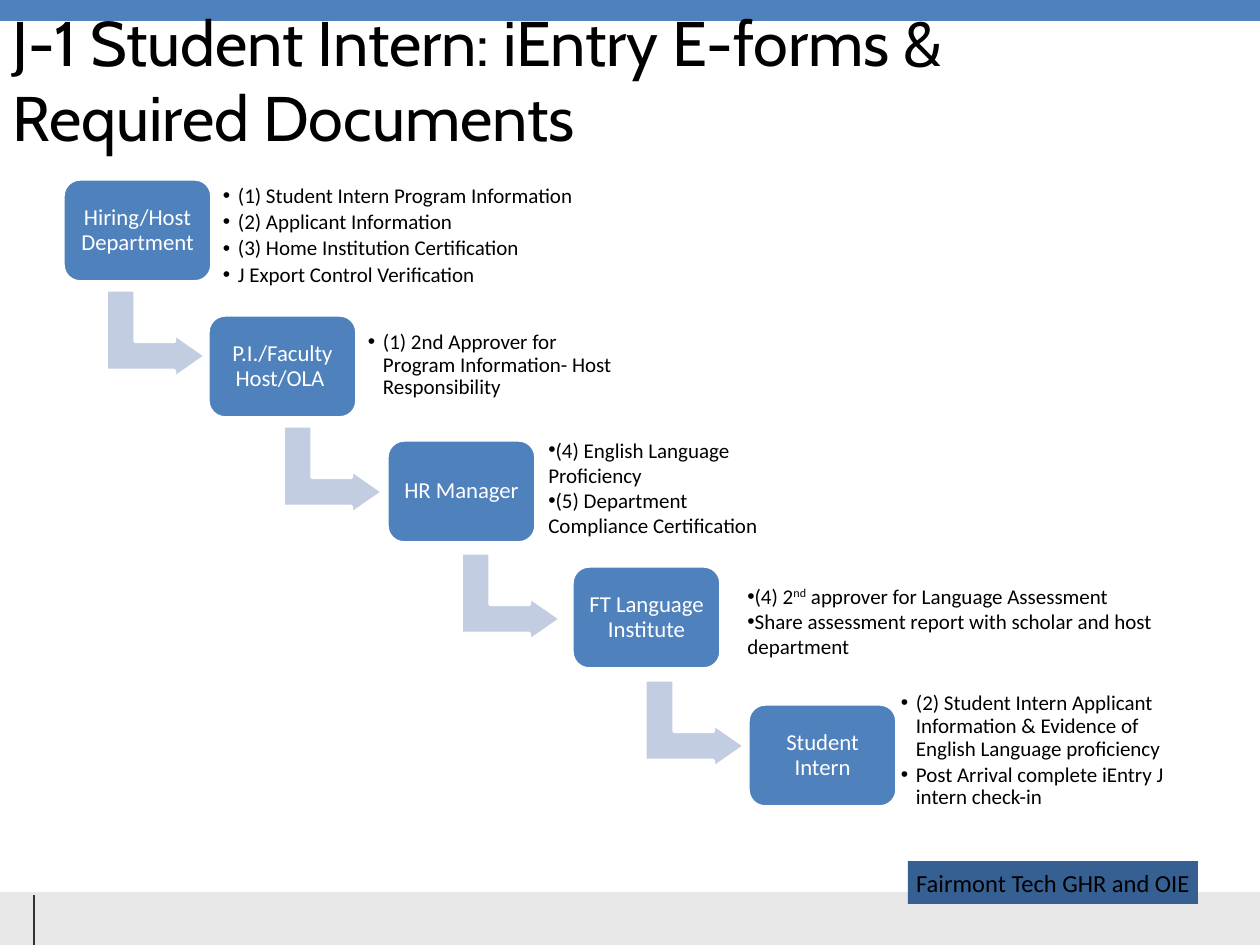
"""Build the J-1 student intern e-forms slide as a descending staircase of steps."""
from lxml.etree import SubElement
from pptx import Presentation
from pptx.dml.color import RGBColor
from pptx.enum.shapes import MSO_CONNECTOR as Connector, MSO_SHAPE as Shape
from pptx.enum.text import MSO_ANCHOR as Anchor, PP_ALIGN as Align
from pptx.oxml.ns import qn
from pptx.util import Pt

PX = 914400 / 126
COLORS = {
    "bar": "4F81BD", "arrow": "C2CDE1", "footer": "E8E8E8", "badge": "376092",
    "rule": "333333", "white": "FFFFFF", "black": "000000",
}
TITLE = "J-1 Student Intern: iEntry E-forms & Required Documents"
BADGE = "Fairmont Tech GHR and OIE"
STEP_SIZE = (149, 103)
ARROW_SIZE = (88, 100)
ARROW_ADJUSTMENTS = (0.33, 0.25, 0.36)
STEPS = [
    {"name": "Hiring/Host Department", "at": (63, 179), "arrow": (112, 284),
     "notes": (217, 188, 420, 96), "hanging": True,
     "bullets": ["(1) Student Intern Program Information", "(2) Applicant Information",
                 "(3) Home Institution Certification", "J Export Control Verification"]},
    {"name": "P.I./Faculty Host/OLA ", "at": (208, 315), "arrow": (289, 420),
     "notes": (362, 324, 270, 83), "hanging": True,
     "bullets": ["(1) 2nd Approver for Program Information- Host Responsibility"]},
    {"name": "HR Manager", "at": (387, 440), "arrow": (467, 547),
     "notes": (536, 431, 238, 115), "hanging": False,
     "bullets": ["(4) English Language Proficiency",
                 "(5) Department Compliance Certification"]},
    {"name": "FT Language Institute", "at": (572, 566), "arrow": (651, 674),
     "notes": (735, 577, 441, 89), "hanging": False,
     "bullets": ["(4) 2^nd^ approver for Language Assessment",
                 "Share assessment report with scholar and host department"]},
    {"name": "Student Intern", "at": (748, 704), "arrow": None,
     "notes": (895, 685, 314, 132), "hanging": True,
     "bullets": ["(2) Student Intern Applicant Information & Evidence of "
                 "English Language proficiency",
                 "Post Arrival complete iEntry J intern check-in"]},
]


def emu(*lengths):
    return [round(length * PX) for length in lengths]


def color(name):
    return RGBColor.from_string(COLORS[name])


def add_block(page, kind, place, fill, outlined=False):
    block = page.shapes.add_shape(kind, *emu(*place))
    block.shadow.inherit = False
    block.fill.solid()
    block.fill.fore_color.rgb = color(fill)
    if outlined:
        block.line.color.rgb = color("white")
        block.line.width = Pt(2)
    else:
        block.line.fill.background()
    return block


def set_margins(frame, margin):
    side = emu(margin)[0]
    frame.margin_left = frame.margin_right = side
    frame.margin_top = frame.margin_bottom = side


def style_text(para, size, font="Calibri", ink="black"):
    for span in para.runs:
        span.font.size = Pt(size)
        span.font.name = font
        span.font.color.rgb = color(ink)


def write(shape, text, size, align, **style):
    frame = shape.text_frame
    frame.vertical_anchor = Anchor.MIDDLE
    para = frame.paragraphs[0]
    para.text = text
    para.alignment = align
    style_text(para, size, **style)
    return para


def add_step(page, name, at):
    box = add_block(page, Shape.ROUNDED_RECTANGLE, at + STEP_SIZE, "bar", outlined=True)
    set_margins(box.text_frame, 11)
    box.text_frame.word_wrap = True
    write(box, name, 13, Align.CENTER, ink="white").line_spacing = 0.9


def add_arrow(page, at):
    arrow = add_block(page, Shape.BENT_UP_ARROW, at + ARROW_SIZE, "arrow", outlined=True)
    arrow.rotation = 90
    for index, value in enumerate(ARROW_ADJUSTMENTS):
        arrow.adjustments[index] = value


def add_bullets(page, place, bullets, hanging):
    frame = page.shapes.add_textbox(*emu(*place)).text_frame
    frame.word_wrap = True
    if hanging:
        frame.vertical_anchor = Anchor.MIDDLE
        set_margins(frame, 6)
    left, indent = emu(15, -15) if hanging else emu(0, -13)
    for index, bullet in enumerate(bullets):
        para = frame.add_paragraph() if index else frame.paragraphs[0]
        for part_index, part in enumerate(bullet.split("^")):
            span = para.add_run()
            span.text = part
            if part_index % 2:
                span.font._element.set("baseline", "30000")
        style_text(para, 12)
        if hanging:
            para.line_spacing = 0.9
            para.space_after = Pt(2)
        settings = para._p.get_or_add_pPr()
        settings.set("marL", str(left))
        settings.set("indent", str(indent))
        SubElement(settings, qn("a:buFont"), typeface="Arial")
        SubElement(settings, qn("a:buChar"), char="•")


def add_frame(page):
    add_block(page, Shape.RECTANGLE, (0, 892, 1260, 53), "footer")
    rule = page.shapes.add_connector(Connector.STRAIGHT, *emu(34, 895, 34, 945))
    rule.line.color.rgb = color("rule")
    rule.line.width = Pt(0.75)
    SubElement(rule._element.spPr, qn("a:effectLst"))
    badge = add_block(page, Shape.RECTANGLE, (908, 861, 290, 43), "badge")
    badge.text_frame.word_wrap = False
    write(badge, BADGE, 14, Align.CENTER)
    add_block(page, Shape.RECTANGLE, (0, 0, 1260, 21), "bar")
    title = page.shapes.add_textbox(*emu(0, 21, 1134, 116))
    title.text_frame.word_wrap = True
    write(title, TITLE, 36, Align.LEFT, font="Cabin")


def main():
    deck = Presentation()
    deck.slide_width, deck.slide_height = emu(1260, 945)
    page = deck.slides.add_slide(deck.slide_layouts[6])
    add_frame(page)
    for step in STEPS:
        if step["arrow"]:
            add_arrow(page, step["arrow"])
        add_step(page, step["name"], step["at"])
        add_bullets(page, step["notes"], step["bullets"], step["hanging"])
    deck.save("out.pptx")


if __name__ == "__main__":
    main()
